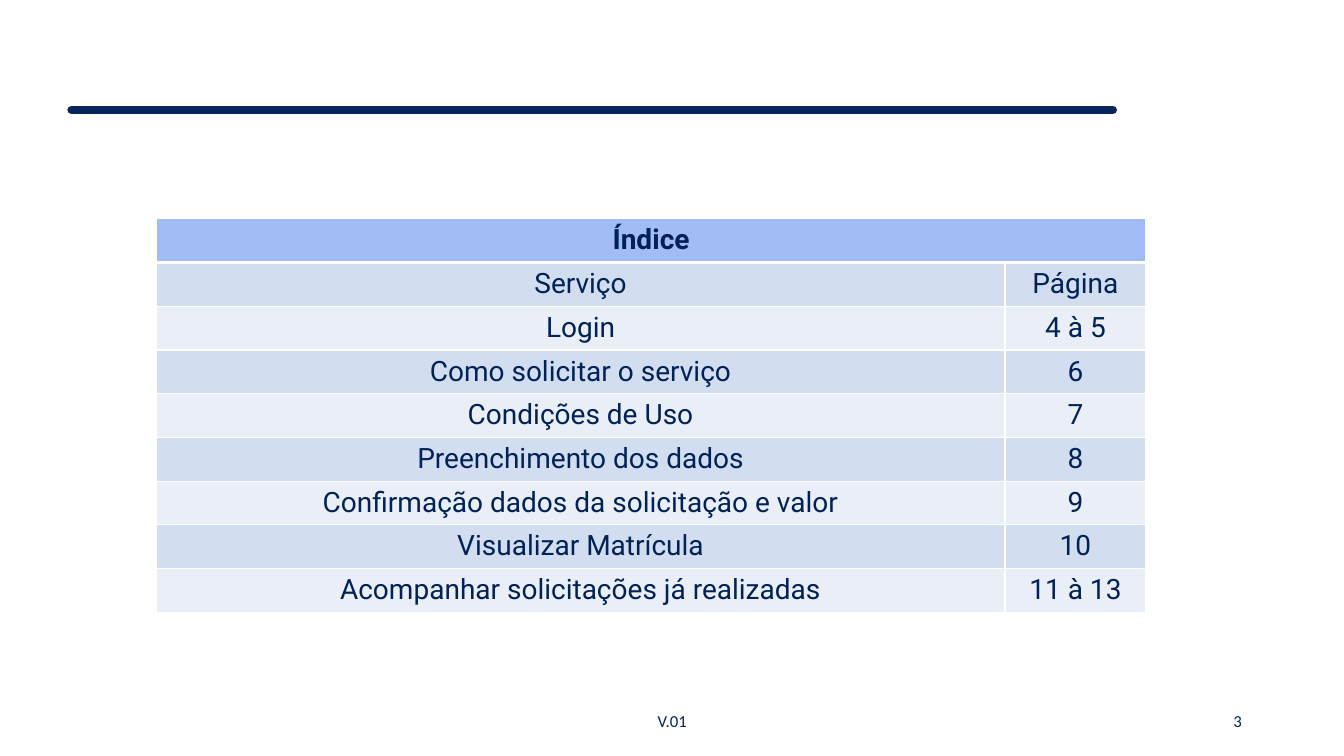
from lxml import etree
from pptx import Presentation
from pptx.dml.color import RGBColor
from pptx.enum.shapes import MSO_CONNECTOR
from pptx.enum.text import MSO_ANCHOR, PP_ALIGN
from pptx.oxml.ns import qn
from pptx.util import Pt

STRAIGHT = MSO_CONNECTOR.STRAIGHT
MIDDLE = MSO_ANCHOR.MIDDLE
CENTER, RIGHT = PP_ALIGN.CENTER, PP_ALIGN.RIGHT

HEAD = "Índice"
ROWS = [
    ("Serviço", "Página"),
    ("Login", "4 à 5"),
    ("Como solicitar o serviço", "6"),
    ("Condições de Uso", "7"),
    ("Preenchimento dos dados", "8"),
    ("Confirmação dados da solicitação e valor", "9"),
    ("Visualizar Matrícula", "10"),
    ("Acompanhar solicitações já realizadas", "11 à 13"),
]
# text, left, width, alignment
FOOT = [("V.01", 318.24, 324, CENTER), ("3", 678.24, 216, RIGHT)]
FOOT_TOP, FOOT_HIGH = 500.4, 28.8

COLORS = {
    "navy": "09235B",
    "text": "002259",
    "head": "A2BCF6",
    "dark": "D2DEEF",
    "light": "EAEFF7",
    "edge": "FFFFFF",
}
LEFT, TOP = 111.6, 156.24
COLS = (606.24, 100.8)
ROW_HIGH = 30.7
RULE_Y, RULE_X1, RULE_X2 = 78.48, 51.12, 794.88


def color(name):
    return RGBColor.from_string(COLORS[name])


def style(para, text, align, font, size, name, bold=False):
    para.text = text
    para.alignment = align
    para.font.name = font
    para.font.size = Pt(size)
    para.font.bold = bold
    para.font.color.rgb = color(name)


def edge(cell, top, bottom):
    """Draw the four cell borders; top and bottom are widths in points."""
    props = cell._tc.get_or_add_tcPr()
    for tag, width in (("lnL", 1), ("lnR", 1), ("lnT", top), ("lnB", bottom)):
        line = etree.SubElement(props, qn("a:" + tag), w=str(Pt(width)))
        fill = etree.SubElement(line, qn("a:solidFill"))
        etree.SubElement(fill, qn("a:srgbClr"), val=COLORS["edge"])


def add_rule(slide):
    rule = slide.shapes.add_connector(
        STRAIGHT, Pt(RULE_X1), Pt(RULE_Y), Pt(RULE_X2), Pt(RULE_Y))
    rule.line.color.rgb = color("navy")
    rule.line.width = Pt(6)
    props = rule._element.spPr
    props.find(qn("a:ln")).set("cap", "rnd")
    etree.SubElement(props, qn("a:effectLst"))


def add_foot(slide):
    for text, left, width, align in FOOT:
        box = slide.shapes.add_textbox(
            Pt(left), Pt(FOOT_TOP), Pt(width), Pt(FOOT_HIGH))
        frame = box.text_frame
        frame.word_wrap = True
        frame.vertical_anchor = MIDDLE
        style(frame.paragraphs[0], text, align, "Calibri", 12, "navy")


def add_index(slide):
    rows = [(HEAD, "")] + ROWS
    table = slide.shapes.add_table(
        len(rows), len(COLS), Pt(LEFT), Pt(TOP),
        Pt(sum(COLS)), Pt(ROW_HIGH * len(rows))).table
    table.first_row = table.horz_banding = False
    for col, width in zip(table.columns, COLS):
        col.width = Pt(width)
    table.cell(0, 0).merge(table.cell(0, 1))
    for r, texts in enumerate(rows):
        table.rows[r].height = Pt(ROW_HIGH)
        shade = "head" if r == 0 else "dark" if r % 2 else "light"
        for c, text in enumerate(texts):
            cell = table.cell(r, c)
            edge(cell, 3 if r == 1 else 1, 3 if r == 0 else 1)
            cell.fill.solid()
            cell.fill.fore_color.rgb = color(shade)
            style(cell.text_frame.paragraphs[0], text, CENTER,
                  "Roboto", 20, "text", r == 0)


def main():
    deck = Presentation()
    deck.slide_width, deck.slide_height = Pt(960), Pt(540)
    slide = deck.slides.add_slide(deck.slide_layouts[6])
    add_rule(slide)
    add_foot(slide)
    add_index(slide)
    deck.save("out.pptx")


if __name__ == "__main__":
    main()
